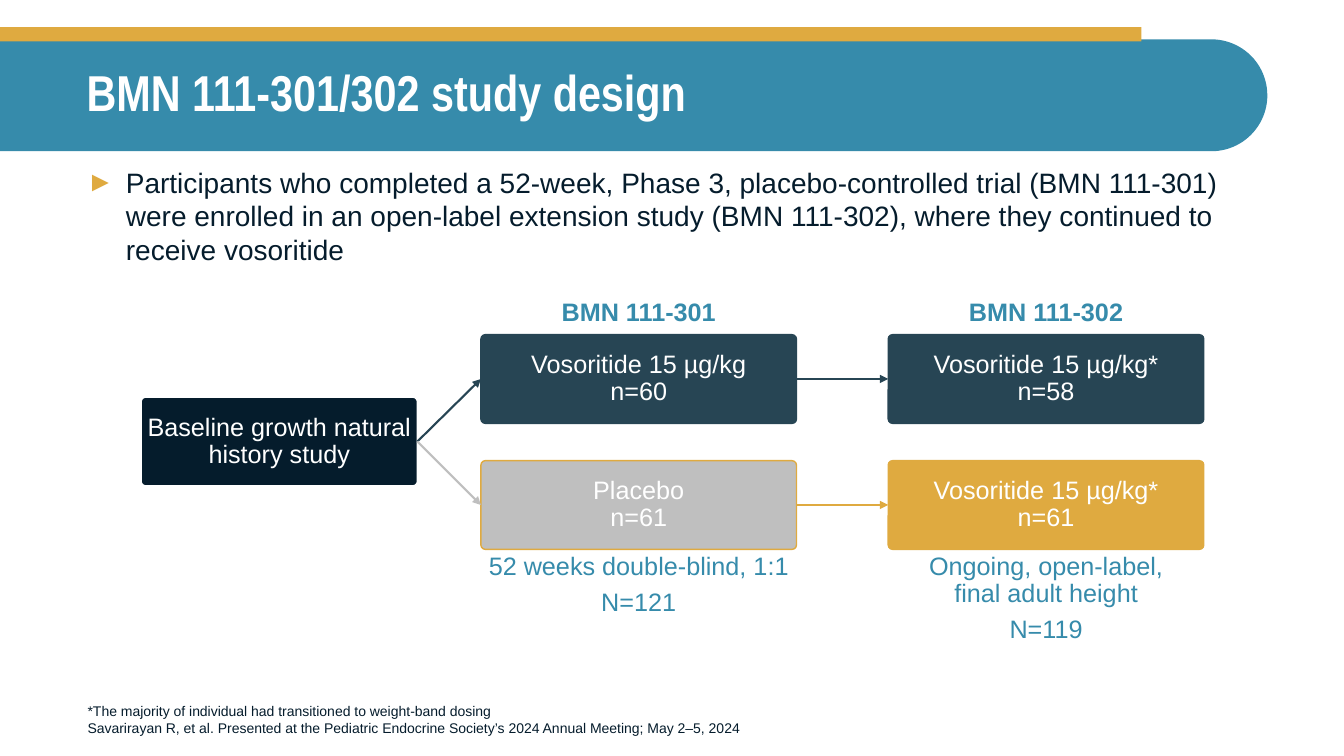
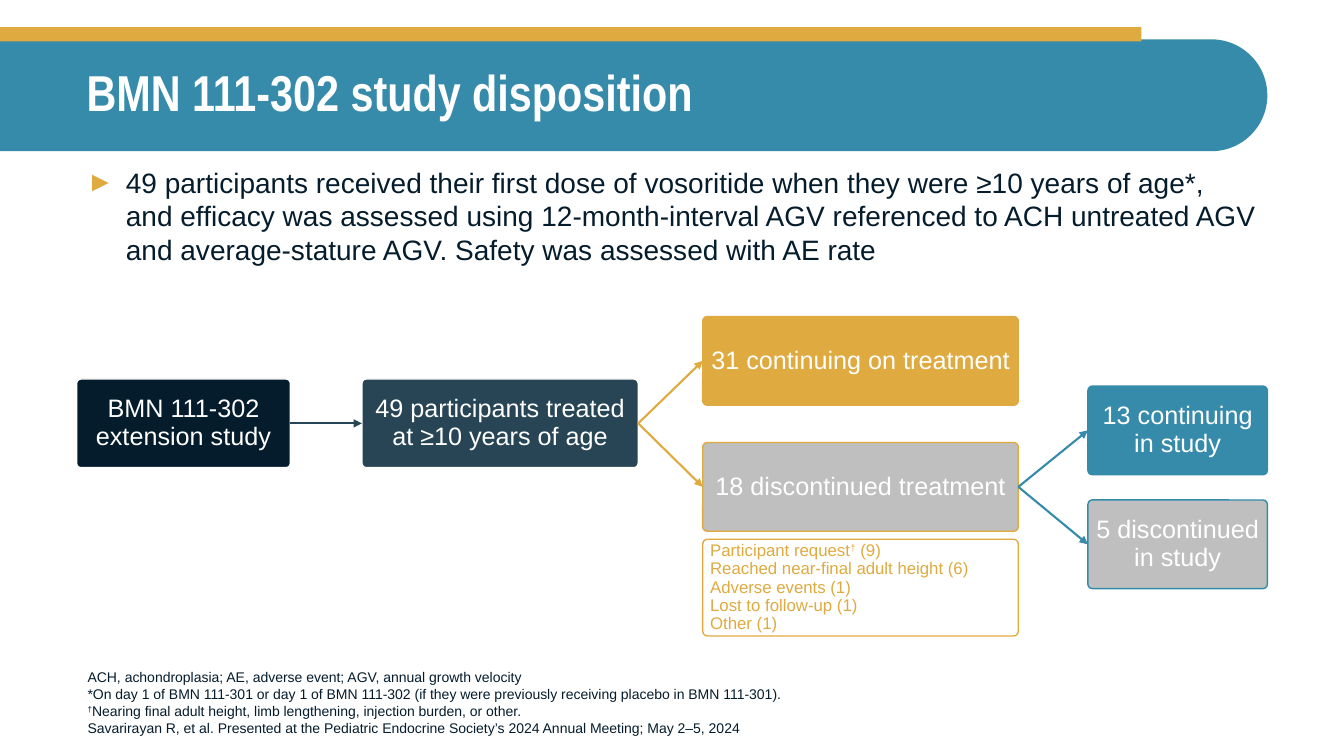
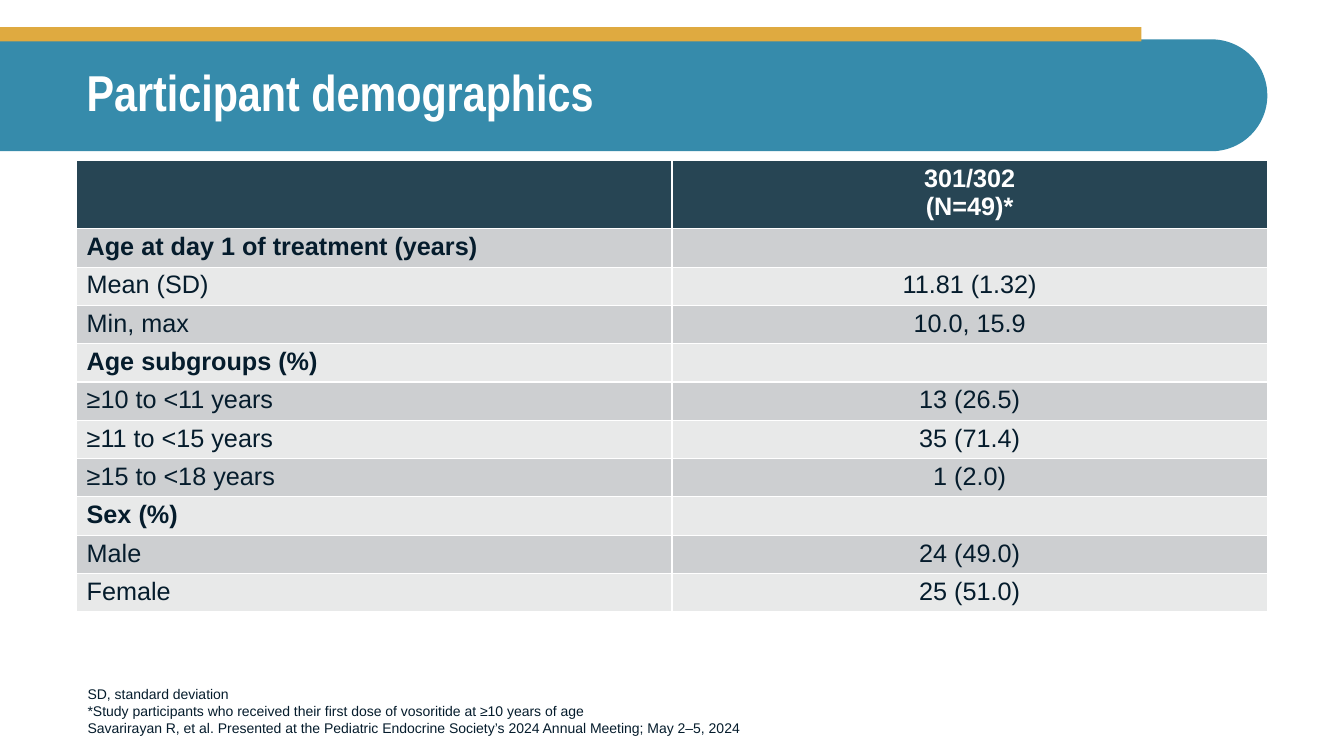
from dataclasses import dataclass

from lxml import etree
from pptx import Presentation
from pptx import util as u
from pptx.dml import color
from pptx.enum import shapes, text
from pptx.oxml import ns

NAVY, SLATE, TEAL, GOLD = "051C2C", "274554", "368BAB", "DFAA40"
GREY, WHITE = "BFBFBF", "FFFFFF"
STRIPES = ("CDCFD1", "E8E9E9")
LEFT, CENTER = text.PP_ALIGN.LEFT, text.PP_ALIGN.CENTER
TOP, MIDDLE, BOTTOM = text.MSO_ANCHOR.TOP, text.MSO_ANCHOR.MIDDLE, text.MSO_ANCHOR.BOTTOM
CITATION = ("Savarirayan R, et al. Presented at the Pediatric Endocrine Society’s "
            "2024 Annual Meeting; May 2–5, 2024")


@dataclass
class Box:
    left: float
    top: float
    width: float
    height: float

    def inner(self, left, top, width, height):
        return Box(self.left + left, self.top + top, width, height)

    def lengths(self):
        return [u.Inches(n) for n in (self.left, self.top, self.width, self.height)]


BAND = Box(0, 0.39, 12.57, 1.11)
STRIP = Box(0, 0.27, 11.32, 0.14)
TITLE = Box(0.76, 0.39, 11.81, 1.1)
BODY = Box(0.76, 1.59, 11.81, 1.1)
FOOTER = Box(0.77, 6.71, 9.88, 0.64)


def rgb(value):
    return color.RGBColor.from_string(value)


def write(para, content, size, tint, bold=False, font="Arial", align=LEFT):
    para.alignment = align
    for number, line in enumerate(content.split("\n")):
        if number:
            para.add_line_break()
        for part in filter(None, line.replace("†", "|†|").split("|")):
            span = para.add_run()
            span.text = part
            span.font.name, span.font.size, span.font.bold = font, u.Pt(size), bold
            span.font.color.rgb = rgb(tint)
            if part == "†":
                span.font._element.set("baseline", "30000")
    for line_break in para._p.findall(ns.qn("a:br")):
        etree.SubElement(line_break, ns.qn("a:rPr"), sz=str(size * 100))


def set_frame(frame, anchor, inset=None):
    frame.word_wrap = True
    frame.vertical_anchor = anchor
    if inset is not None:
        frame.margin_left = frame.margin_right = u.Inches(inset)
        frame.margin_top = frame.margin_bottom = u.Inches(inset)


def add_text(page, box, content, size, tint, anchor=TOP, **style):
    frame = page.shapes.add_textbox(*box.lengths()).text_frame
    set_frame(frame, anchor)
    write(frame.paragraphs[0], content, size, tint, **style)
    return frame


def add_block(page, kind, box, fill, line=None):
    block = page.shapes.add_shape(kind, *box.lengths())
    block.shadow.inherit = False
    if fill:
        block.fill.solid()
        block.fill.fore_color.rgb = rgb(fill)
    else:
        block.fill.background()
    if line:
        block.line.color.rgb = rgb(line)
        block.line.width = u.Pt(1)
    else:
        block.line.fill.background()
    return block


def add_node(page, box, content, fill, line, size=18, tint=WHITE, align=CENTER, inset=0.04):
    node = add_block(page, shapes.MSO_SHAPE.ROUNDED_RECTANGLE, box, fill, line)
    node.adjustments[0] = 0.05
    set_frame(node.text_frame, MIDDLE, inset)
    para = node.text_frame.paragraphs[0]
    para.line_spacing = 0.9
    write(para, content, size, tint, align=align)
    return node


def add_arrow(page, start, end, tint):
    arrow = page.shapes.add_connector(shapes.MSO_CONNECTOR.STRAIGHT, 0, 0, 0, 0)
    arrow.begin_connect(start, 3)
    arrow.end_connect(end, 1)
    arrow.line.color.rgb = rgb(tint)
    arrow.line.width = u.Pt(1.5)
    etree.SubElement(arrow.line._get_or_add_ln(), ns.qn("a:tailEnd"), type="triangle")
    etree.SubElement(arrow._element.spPr, ns.qn("a:effectLst"))


def add_page(deck, title, notes):
    page = deck.slides.add_slide(deck.slide_layouts[6])
    middle_x, middle_y = BAND.left + BAND.width / 2, BAND.top + BAND.height / 2
    upright = Box(middle_x - BAND.height / 2, middle_y - BAND.width / 2, BAND.height, BAND.width)
    band = add_block(page, shapes.MSO_SHAPE.ROUND_2_SAME_RECTANGLE, upright, TEAL)
    band.adjustments[0], band.adjustments[1] = 0, 0.5
    band.rotation = 270
    add_block(page, shapes.MSO_SHAPE.RECTANGLE, STRIP, GOLD)
    heading = add_text(page, TITLE, title, 36, WHITE, MIDDLE, bold=True, font="Arial Narrow")
    heading.paragraphs[0].line_spacing = 0.9
    add_text(page, FOOTER, "\n".join(notes + [CITATION]), 10, NAVY, BOTTOM)
    return page


def add_bullet(page, box, content):
    frame = page.shapes.add_textbox(*box.lengths()).text_frame
    set_frame(frame, TOP)
    para = frame.paragraphs[0]
    props = para._p.get_or_add_pPr()
    indent = u.Inches(0.39)
    props.set("marL", str(indent))
    props.set("indent", str(-indent))
    tint = etree.SubElement(props, ns.qn("a:buClr"))
    etree.SubElement(tint, ns.qn("a:srgbClr"), val=GOLD)
    etree.SubElement(props, ns.qn("a:buFont"), typeface="Arial")
    etree.SubElement(props, ns.qn("a:buChar"), char="►")
    write(para, content, 20, NAVY)


def add_design(page, area):
    width, height = 3.13, 0.88
    upper, lower = 0.4, 1.65
    studies = [
        (3.37, "BMN 111-301", ["52 weeks double-blind, 1:1", "N=121"],
         ("Vosoritide 15 µg/kg\nn=60", SLATE), ("Placebo\nn=61", GREY)),
        (7.41, "BMN 111-302", ["Ongoing, open-label,\nfinal adult height", "N=119"],
         ("Vosoritide 15 µg/kg*\nn=58", SLATE), ("Vosoritide 15 µg/kg*\nn=61", GOLD)),
    ]
    baseline = add_node(page, area.inner(0, 1.02, 2.74, height),
                        "Baseline growth natural history study", NAVY, WHITE)
    arms = []
    for left, name, caption, active, control in studies:
        add_text(page, area.inner(left, 0, width, 0.37), name, 18, TEAL,
                 bold=True, align=CENTER).paragraphs[0].line_spacing = 0.9
        arms.append([add_node(page, area.inner(left, top, width, height), label, fill, line)
                     for top, (label, fill), line in ((upper, active, SLATE), (lower, control, GOLD))])
        frame = add_text(page, area.inner(left - 0.06, 2.52, width + 0.12, 1.02),
                         caption[0], 18, TEAL, align=CENTER)
        write(frame.add_paragraph(), caption[1], 18, TEAL, align=CENTER)
        for para in frame.paragraphs:
            para.line_spacing = 0.9
            para.space_after = u.Pt(6.3)
    for first, second, near, far in zip(*arms, (SLATE, GREY), (SLATE, GOLD)):
        add_arrow(page, baseline, first, near)
        add_arrow(page, first, second, far)


def add_disposition(page, area):
    height = 0.88
    study = add_node(page, area.inner(0, 0.62, 2.12, height),
                     "BMN 111-302 extension study", NAVY, WHITE)
    treated = add_node(page, area.inner(2.83, 0.62, 2.74, height),
                       "49 participants treated at ≥10 years of age", SLATE, WHITE)
    continuing = add_node(page, area.inner(6.21, 0, 3.13, height),
                          "31 continuing on treatment", GOLD, GOLD)
    stopped = add_node(page, area.inner(6.21, 1.25, 3.13, height),
                       "18 discontinued treatment", GREY, GOLD)
    add_node(page, area.inner(6.21, 2.21, 3.13, 0.96),
             "Participant request† (9)\nReached near-final adult height (6)\n"
             "Adverse events (1)\nLost to follow-up (1)\nOther (1)",
             None, GOLD, size=12, tint=GOLD, align=LEFT, inset=0.06)
    remaining = add_node(page, area.inner(10.03, 0.69, 1.78, height),
                         "13 continuing in study", TEAL, TEAL)
    withdrawn = add_node(page, area.inner(10.03, 1.82, 1.78, height),
                         "5 discontinued in study", GREY, TEAL)
    for start, end, tint in ((study, treated, SLATE), (treated, stopped, GOLD),
                             (treated, continuing, GOLD), (stopped, remaining, TEAL),
                             (stopped, withdrawn, TEAL)):
        add_arrow(page, start, end, tint)


def add_demographics(page, box):
    rows = [
        ("", "301/302\n(N=49)*"),
        ("Age at day 1 of treatment (years)", ""),
        ("Mean (SD)", "11.81 (1.32)"),
        ("Min, max", "10.0, 15.9"),
        ("Age subgroups (%)", ""),
        ("≥10 to <11 years", "13 (26.5)"),
        ("≥11 to <15 years", "35 (71.4)"),
        ("≥15 to <18 years", "1 (2.0)"),
        ("Sex (%)", ""),
        ("Male", "24 (49.0)"),
        ("Female", "25 (51.0)"),
    ]
    table = page.shapes.add_table(len(rows), 2, *box.lengths()).table
    for number, values in enumerate(rows):
        header = number == 0
        table.rows[number].height = u.Inches(0.65 if header else 0.38)
        for column, value in enumerate(values):
            cell = table.cell(number, column)
            cell.margin_top = cell.margin_bottom = u.Inches(0.04)
            cell.fill.solid()
            cell.fill.fore_color.rgb = rgb(SLATE if header else STRIPES[(number - 1) % 2])
            write(cell.text_frame.paragraphs[0], value, 18, WHITE if header else NAVY,
                  bold=header or not values[1], align=CENTER if column else LEFT)


def main():
    deck = Presentation()
    deck.slide_width, deck.slide_height = u.Inches(13.33), u.Inches(7.5)

    page = add_page(deck, "BMN 111-301/302 study design",
                    ["*The majority of individual had transitioned to weight-band dosing"])
    add_bullet(page, BODY, "Participants who completed a 52-week, Phase 3, placebo-controlled trial "
               "(BMN 111-301) were enrolled in an open-label extension study (BMN 111-302), "
               "where they continued to receive vosoritide")
    add_design(page, Box(1.4, 2.92, 10.54, 3.54))

    page = add_page(deck, "BMN 111-302 study disposition", [
        "ACH, achondroplasia; AE, adverse event; AGV, annual growth velocity",
        "*On day 1 of BMN 111-301 or day 1 of BMN 111-302 "
        "(if they were previously receiving placebo in BMN 111-301).",
        "†Nearing final adult height, limb lengthening, injection burden, or other."])
    add_bullet(page, BODY, "49 participants received their first dose of vosoritide when they were "
               "≥10 years of age*,\nand efficacy was assessed using 12-month-interval AGV referenced "
               "to ACH untreated AGV and average-stature AGV. Safety was assessed with AE rate")
    add_disposition(page, Box(0.76, 3.14, 11.81, 3.17))

    page = add_page(deck, "Participant demographics", [
        "SD, standard deviation",
        "*Study participants who received their first dose of vosoritide at ≥10 years of age"])
    add_demographics(page, Box(0.76, 1.59, 11.81, 4.45))

    deck.save("out.pptx")


if __name__ == "__main__":
    main()
